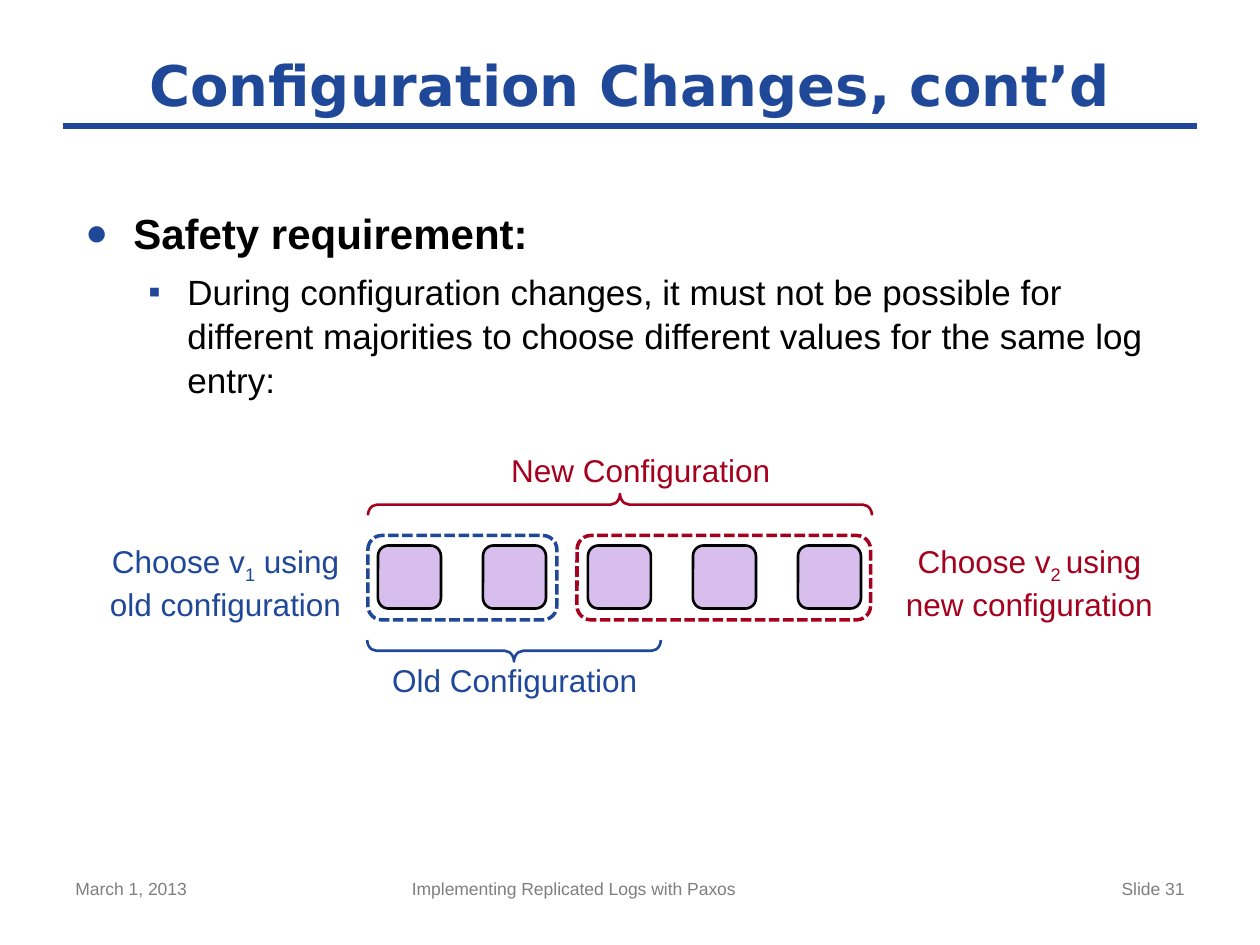
"""Build the slide on the safety requirement for configuration changes."""
from lxml import etree
from pptx import Presentation
from pptx.dml.color import RGBColor
from pptx.enum import dml, shapes, text
from pptx.oxml.ns import qn
from pptx.util import Inches, Pt

BLUE, RED, GRAY, BLACK, LILAC = "1F4899", "A5001E", "7F7F7F", "000000", "D8BEEC"
LEFT, CENTER, RIGHT = text.PP_ALIGN.LEFT, text.PP_ALIGN.CENTER, text.PP_ALIGN.RIGHT


def paint(target, color):
    if hasattr(target, "solid"):
        target.solid()
        target = target.fore_color
    target.rgb = RGBColor.from_string(color)


def write(paragraph, content, size=18, color=BLACK, bold=False, font="Arial", align=LEFT):
    paragraph.alignment = align
    for row, line in enumerate(content.split("\n")):
        if row:
            paragraph.add_line_break()
        for part, piece in enumerate(line.split("_")):
            run = paragraph.add_run()
            run.text = piece
            run.font.size, run.font.bold, run.font.name = Pt(size), bold, font
            paint(run.font.color, color)
            if part % 2:
                run.font._element.set("baseline", "-25000")


deck = Presentation()
deck.slide_width, deck.slide_height = Inches(10), Inches(7.5)
slide = deck.slides.add_slide(deck.slide_layouts[5])

title = slide.shapes.title
title.left, title.top, title.width, title.height = map(Inches, (0.5, 0.33, 9, 0.67))
title.text_frame.vertical_anchor = text.MSO_ANCHOR.MIDDLE
write(title.text_frame.paragraphs[0], "Configuration Changes, cont’d",
      size=32, color=BLUE, bold=True, font="DejaVu Sans", align=CENTER)

rule = slide.shapes.add_connector(shapes.MSO_CONNECTOR.STRAIGHT,
                                  Inches(0.5), Inches(1), Inches(9.5), Inches(1))
rule.line.width = Pt(4)
paint(rule.line.fill, BLUE)
etree.SubElement(rule._element.spPr, qn("a:effectLst"))

requirement = slide.shapes.add_textbox(Inches(0.58), Inches(1.58), Inches(9), Inches(5.03)).text_frame
requirement.word_wrap = True
points = [
    ("Safety requirement:", 24, True, 12, 0.38, 0.38, "●", 90),
    ("During configuration changes, it must not be possible for different majorities "
     "to choose different values for the same log entry:", 20, False, 6, 0.81, 0.31, "▪", 100),
]
for level, (content, size, bold, before, margin, hanging, mark, scale) in enumerate(points):
    point = requirement.add_paragraph() if level else requirement.paragraphs[0]
    write(point, content, size=size, bold=bold)
    point.level, point.space_before, point.line_spacing = level, Pt(before), 1.05
    properties = point._p.get_or_add_pPr()
    properties.set("marL", str(Inches(margin)))
    properties.set("indent", str(-Inches(hanging)))
    bullet_color = etree.SubElement(properties, qn("a:buClr"))
    etree.SubElement(bullet_color, qn("a:srgbClr"), val=BLUE)
    etree.SubElement(properties, qn("a:buSzPct"), val=str(scale * 1000))
    etree.SubElement(properties, qn("a:buFont"), typeface="Arial")
    etree.SubElement(properties, qn("a:buChar"), char=mark)

pitch = 5 / 6
for server_index in range(5):
    server = slide.shapes.add_shape(shapes.MSO_SHAPE.ROUNDED_RECTANGLE,
                                    Inches(3 + server_index * pitch), Inches(4.33),
                                    Inches(0.5), Inches(0.5))
    server.shadow.inherit = False
    server.line.width = Pt(1.5)
    paint(server.fill, LILAC)
    paint(server.line.fill, BLACK)

for middle, top, span, turn, color in [(4.08, 5.08, 2.33, 270, BLUE), (4.92, 3.92, 4, 90, RED)]:
    thickness = 0.17
    brace = slide.shapes.add_shape(shapes.MSO_SHAPE.LEFT_BRACE,
                                   Inches(middle - thickness / 2),
                                   Inches(top + thickness / 2 - span / 2),
                                   Inches(thickness), Inches(span))
    brace.rotation = turn
    brace.adjustments[0] = 0.43
    brace.shadow.inherit = False
    brace.fill.background()
    brace.line.width = Pt(1.5)
    paint(brace.line.fill, color)

for left, width, color in [(4.58, 2.33, RED), (2.92, 1.5, BLUE)]:
    majority = slide.shapes.add_shape(shapes.MSO_SHAPE.ROUNDED_RECTANGLE,
                                      Inches(left), Inches(4.25), Inches(width), Inches(0.67))
    majority.shadow.inherit = False
    majority.fill.background()
    majority.line.width = Pt(2)
    majority.line.dash_style = dml.MSO_LINE.SQUARE_DOT
    paint(majority.line.fill, color)

labels = [
    ("Old Configuration", 2.92, 5.25, 2.33, 0.3, 0, 18, BLUE, CENTER),
    ("New Configuration", 3.92, 3.58, 2.33, 0.3, 0, 18, RED, CENTER),
    ("Choose v_2 _using\nnew configuration", 6.92, 4.25, 2.5, 0.71, 0.05, 18, RED, CENTER),
    ("Choose v_1_ using\nold configuration", 0.75, 4.25, 2.08, 0.71, 0.05, 18, BLUE, CENTER),
    ("March 1, 2013", 0.5, 6.92, 2.33, 0.43, 0.05, 10, GRAY, LEFT),
    ("Implementing Replicated Logs with Paxos", 3.17, 6.92, 3.75, 0.43, 0.05, 10, GRAY, LEFT),
    ("Slide 31", 7.17, 6.92, 2.33, 0.43, 0.05, 10, GRAY, RIGHT),
]
for content, left, top, width, height, inset, size, color, align in labels:
    label = slide.shapes.add_textbox(Inches(left), Inches(top), Inches(width), Inches(height)).text_frame
    label.word_wrap = True
    label.margin_top = label.margin_bottom = Inches(inset)
    label.margin_left = label.margin_right = Inches(inset * 2)
    write(label.paragraphs[0], content, size=size, color=color, align=align)

deck.save("out.pptx")
